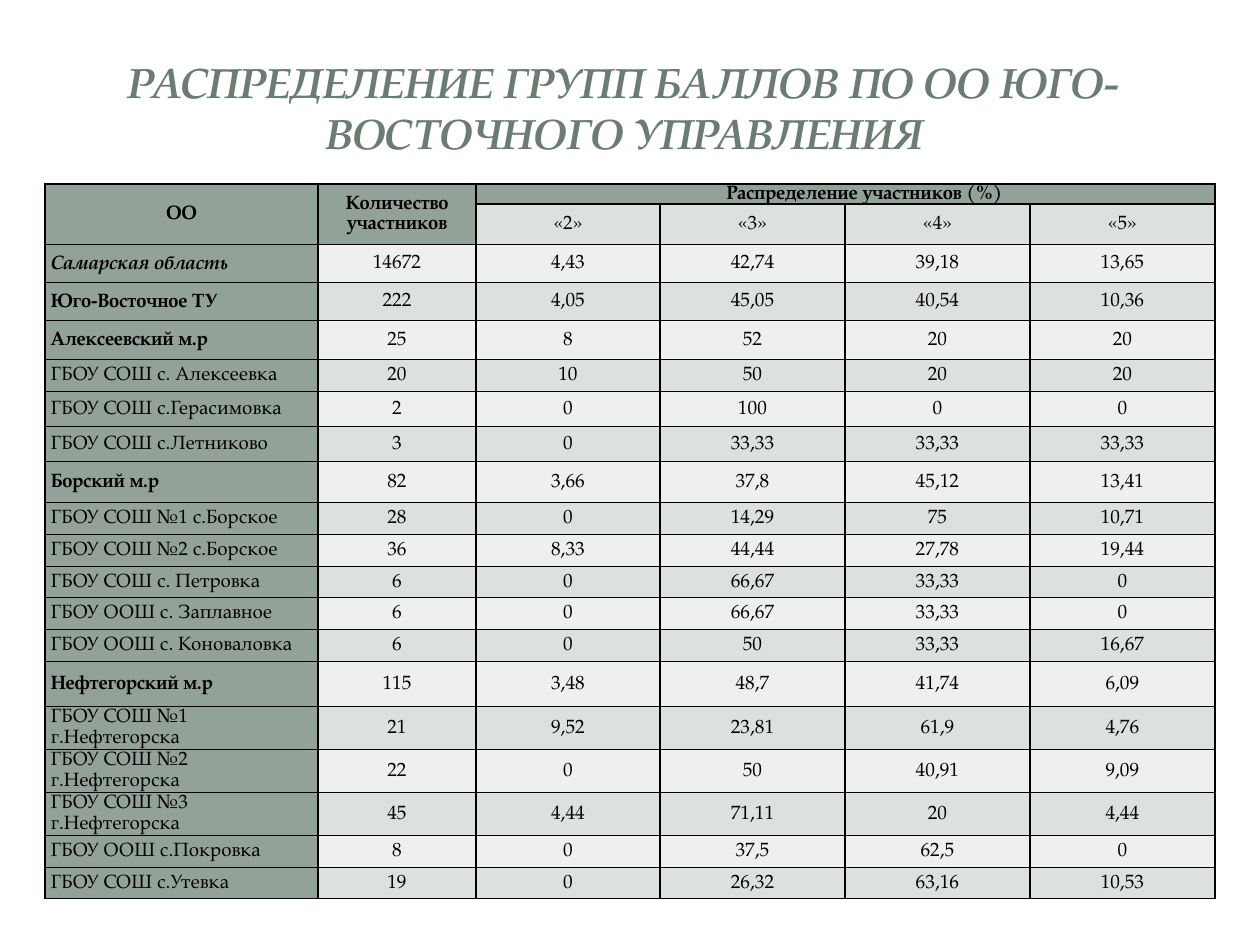
from dataclasses import dataclass

from lxml import etree
from pptx import Presentation
from pptx.dml.color import RGBColor
from pptx.enum.shapes import MSO_SHAPE
from pptx.enum.text import MSO_ANCHOR, PP_ALIGN
from pptx.oxml.ns import qn
from pptx.util import Emu, Pt

LEFT, CENTER = PP_ALIGN.LEFT, PP_ALIGN.CENTER
MIDDLE = MSO_ANCHOR.MIDDLE
RECTANGLE, ROUNDED = MSO_SHAPE.RECTANGLE, MSO_SHAPE.ROUNDED_RECTANGLE
EMU_PER_PX = 914400 / 126
BORDER_SIDES = ("a:lnL", "a:lnR", "a:lnT", "a:lnB")
TRACKING = {"+": "10", "-": "-10"}


@dataclass(frozen=True)
class Theme:
    font: str = "TeX Gyre Pagella"
    panel: str = "FFFFFF"
    title: str = "6B7D72"
    text: str = "000000"
    border: str = "000000"
    accent: str = "93A299"
    dark_band: str = "DCE0DE"
    light_band: str = "EEF0EF"
    title_size: float = 24
    table_size: float = 11
    header_leading: float = 11.55
    body_leading: float = 12.1
    border_width: float = 1


@dataclass(frozen=True)
class Panel:
    kind: MSO_SHAPE
    left: int
    top: int
    width: int
    height: int
    opacity: int = 100


@dataclass(frozen=True)
class CellStyle:
    fill: str
    leading: float
    align: PP_ALIGN = CENTER
    bold: bool = False
    italic: bool = False
    space_before: float = 0
    indent: int = 0


@dataclass(frozen=True)
class ResultRow:
    height: int
    name: str
    values: str
    bold: bool = False
    italic: bool = False


THEME = Theme()
PANELS = (
    Panel(ROUNDED, 13, 14, 1235, 919),
    Panel(RECTANGLE, 38, 38, 1184, 183, 83),
    Panel(RECTANGLE, 52, 52, 1155, 154),
)
TITLE = "РАСПРЕДЕЛЕНИЕ ГРУПП БАЛЛОВ ПО ОО ЮГО-ВОСТОЧНОГО УПРАВЛЕНИЯ"
COLUMN_WIDTHS = (273, 158, 184, 185, 185, 185)
HEADER_HEIGHTS = (20, 40)
COUNT_HEADER = "Кол|+и|че|-с|тво |-у|ч|+а|ст|+ни|ков"
DISTRIBUTION_HEADER = "Распредел|-е|н|+и|е |-у|ча|-с|т|+ни|ков (|-%|)"
GRADES = ("«2»", "«3»", "«4»", "«5»")
RESULTS = (
    ResultRow(38, "Са|+м|арская обла|-с|+т|ь", "14672 4,43 42,74 39,18 13,65", True, True),
    ResultRow(38, "Юго-Вос|+т|очное ТУ", "222 4,05 45,05 40,54 10,36", True),
    ResultRow(39, "Алекс|-ее|вск|+и|й м.р", "25 8 52 20 20", True),
    ResultRow(32, "ГБОУ СОШ с. Алексеевка", "20 10 50 20 20"),
    ResultRow(35, "ГБОУ СОШ с.Герасимовка", "2 0 100 0 0"),
    ResultRow(35, "ГБОУ СОШ с.Летниково", "3 0 33,33 33,33 33,33"),
    ResultRow(41, "Бор|-с|к|+и|й м.р", "82 3,66 37,8 45,12 13,41", True),
    ResultRow(32, "ГБОУ СОШ №1 с.Борское", "28 0 14,29 75 10,71"),
    ResultRow(32, "ГБОУ СОШ №2 с.Борское", "36 8,33 44,44 27,78 19,44"),
    ResultRow(31, "ГБОУ СОШ с. Петровка", "6 0 66,67 33,33 0"),
    ResultRow(32, "ГБОУ ООШ с. Заплавное", "6 0 66,67 33,33 0"),
    ResultRow(32, "ГБОУ ООШ с. Коноваловка", "6 0 50 33,33 16,67"),
    ResultRow(45, "Н|-е|ф|+т|егор|-с|к|+и|й м.р", "115 3,48 48,7 41,74 6,09", True),
    ResultRow(43, "ГБОУ СОШ №1 г.Нефтегорска", "21 9,52 23,81 61,9 4,76"),
    ResultRow(43, "ГБОУ СОШ №2 г.Нефтегорска", "22 0 50 40,91 9,09"),
    ResultRow(43, "ГБОУ СОШ №3 г.Нефтегорска", "45 4,44 71,11 20 4,44"),
    ResultRow(32, "ГБОУ ООШ с.Покровка", "8 0 37,5 62,5 0"),
    ResultRow(31, "ГБОУ СОШ с.Утевка", "19 0 26,32 63,16 10,53"),
)


def px(value: int) -> Emu:
    return Emu(round(value * EMU_PER_PX))


def apply_format(target, values: dict) -> None:
    for name, value in values.items():
        setattr(target, name, value)


def add_panel(slide, panel: Panel) -> None:
    shape = slide.shapes.add_shape(
        panel.kind, px(panel.left), px(panel.top), px(panel.width), px(panel.height))
    shape.shadow.inherit = False
    shape.fill.solid()
    shape.fill.fore_color.rgb = RGBColor.from_string(THEME.panel)
    shape.line.fill.background()
    if panel.kind == ROUNDED:
        shape.adjustments[0] = 0.02
    if panel.opacity < 100:
        color = shape._element.spPr.find(".//" + qn("a:srgbClr"))
        etree.SubElement(color, qn("a:alpha"), val=str(panel.opacity * 1000))


def add_runs(paragraph, text: str, color: str, size: float, bold: bool, italic: bool) -> None:
    for part in text.split("|"):
        tracking = TRACKING.get(part[0])
        run = paragraph.add_run()
        run.text = part[1:] if tracking else part
        apply_format(run.font, {
            "name": THEME.font, "size": Pt(size), "bold": bold, "italic": italic})
        run.font.color.rgb = RGBColor.from_string(color)
        if tracking:
            run._r.get_or_add_rPr().set("spc", tracking)


def add_title(slide) -> None:
    shape = slide.shapes.add_textbox(px(55), px(35), px(1138), px(144))
    apply_format(shape.text_frame, {"word_wrap": True, "vertical_anchor": MIDDLE})
    paragraph = shape.text_frame.paragraphs[0]
    paragraph.alignment = CENTER
    add_runs(paragraph, TITLE, THEME.title, THEME.title_size, True, True)


def add_borders(cell) -> None:
    properties = cell._tc.get_or_add_tcPr()
    for position, side in enumerate(BORDER_SIDES):
        line = etree.Element(qn(side), w=str(Pt(THEME.border_width)))
        fill = etree.SubElement(line, qn("a:solidFill"))
        etree.SubElement(fill, qn("a:srgbClr"), val=THEME.border)
        properties.insert(position, line)


def fill_cell(cell, text: str, style: CellStyle) -> None:
    apply_format(cell, {
        "margin_left": px(6), "margin_right": px(6),
        "margin_top": 0, "margin_bottom": 0, "vertical_anchor": MIDDLE,
    })
    cell.fill.solid()
    cell.fill.fore_color.rgb = RGBColor.from_string(style.fill)
    add_borders(cell)
    paragraph = cell.text_frame.paragraphs[0]
    apply_format(paragraph, {
        "alignment": style.align,
        "line_spacing": Pt(style.leading),
        "space_before": Pt(style.space_before),
    })
    if style.indent:
        paragraph._p.get_or_add_pPr().set("marL", str(px(style.indent)))
    if text:
        add_runs(paragraph, text, THEME.text, THEME.table_size, style.bold, style.italic)


def fill_header(table) -> None:
    header = CellStyle(THEME.accent, THEME.header_leading, bold=True)
    grade = CellStyle(THEME.dark_band, THEME.header_leading)
    organisation = CellStyle(THEME.accent, THEME.header_leading, bold=True, space_before=2.9)
    distribution = CellStyle(THEME.accent, THEME.header_leading, bold=True, indent=38)
    top_row = (("ОО", organisation), (COUNT_HEADER, header),
               (DISTRIBUTION_HEADER, distribution), *[("", header)] * 3)
    bottom_row = (*[("", header)] * 2, *((text, grade) for text in GRADES))
    for row, contents in enumerate((top_row, bottom_row)):
        for column, (text, style) in enumerate(contents):
            fill_cell(table.cell(row, column), text, style)
    for column in range(2):
        table.cell(0, column).merge(table.cell(1, column))
    table.cell(0, 2).merge(table.cell(0, 5))


def fill_results(table) -> None:
    bands = (THEME.light_band, THEME.dark_band)
    for index, result in enumerate(RESULTS):
        row = index + len(HEADER_HEIGHTS)
        name_style = CellStyle(THEME.accent, THEME.body_leading, LEFT, result.bold, result.italic)
        value_style = CellStyle(bands[index % 2], THEME.body_leading)
        fill_cell(table.cell(row, 0), result.name, name_style)
        for column, value in enumerate(result.values.split(), start=1):
            fill_cell(table.cell(row, column), value, value_style)


def add_results_table(slide) -> None:
    heights = (*HEADER_HEIGHTS, *(result.height for result in RESULTS))
    size = px(sum(COLUMN_WIDTHS)), px(sum(heights))
    frame = slide.shapes.add_table(len(heights), len(COLUMN_WIDTHS), px(45), px(184), *size)
    for column, width in zip(frame.table.columns, COLUMN_WIDTHS):
        column.width = px(width)
    for row, height in zip(frame.table.rows, heights):
        row.height = px(height)
    fill_header(frame.table)
    fill_results(frame.table)


def main() -> None:
    presentation = Presentation()
    apply_format(presentation, {"slide_width": px(1260), "slide_height": px(945)})
    slide = presentation.slides.add_slide(presentation.slide_layouts[6])
    for panel in PANELS:
        add_panel(slide, panel)
    add_title(slide)
    add_results_table(slide)
    presentation.save("out.pptx")


if __name__ == "__main__":
    main()
